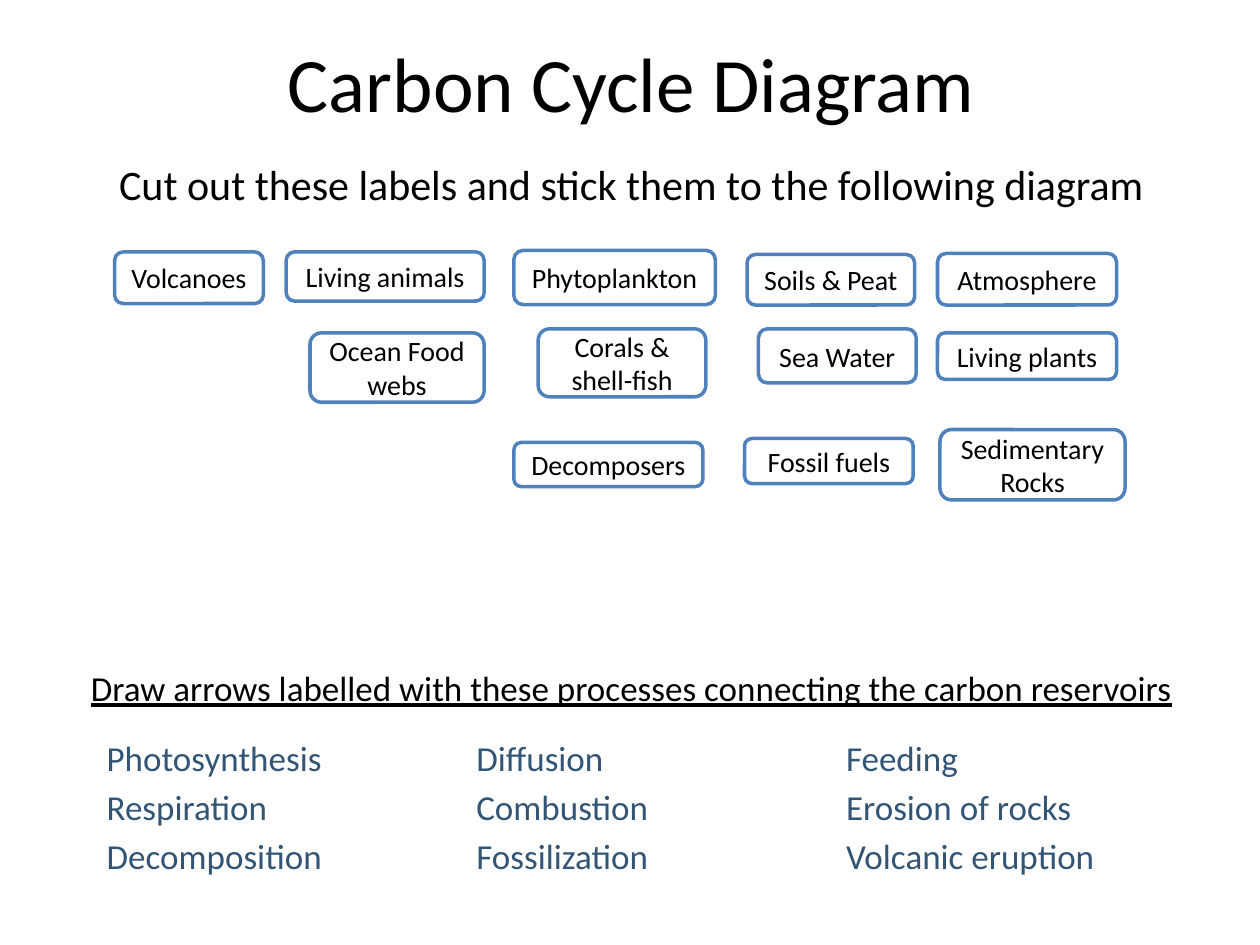
"""Build a worksheet slide of carbon cycle labels and processes."""
from pptx import Presentation
from pptx import util as u
from pptx.dml.color import RGBColor
from pptx.enum import shapes, text

TITLE = "Carbon Cycle Diagram"
CUT_OUT = "Cut out these labels and stick them to the following diagram"
DRAW = "Draw arrows labelled with these processes connecting the carbon reservoirs"
PROCESSES = [
    "Photosynthesis", "Respiration", "Decomposition",
    "Diffusion", "Combustion", "Fossilization",
    "Feeding", "Erosion of rocks", "Volcanic eruption",
]
LABELS = [
    ("Volcanoes", 2.31, 5.08, 3, 1.04),
    ("Living animals", 5.77, 5.08, 3.99, 0.99),
    ("Phytoplankton", 10.36, 5.05, 4.06, 1.09),
    ("Soils & Peat", 15.06, 5.13, 3.38, 1.02),
    ("Atmosphere", 18.9, 5.11, 3.61, 1.04),
    ("Ocean Food webs", 6.25, 6.71, 3.51, 1.4),
    ("Corals & shell-fish", 10.85, 6.63, 3.38, 1.37),
    ("Sea Water", 15.29, 6.63, 3.18, 1.09),
    ("Living plants", 18.9, 6.71, 3.61, 0.94),
    ("Decomposers", 10.36, 8.92, 3.81, 0.89),
    ("Fossil fuels", 15.01, 8.84, 3.4, 0.91),
    ("Sedimentary Rocks", 18.95, 8.66, 3.73, 1.42),
]
LEFT, WIDTH = 1.3, 22.86
BLACK, WHITE, BORDER, PROCESS = "000000", "FFFFFF", "4F81BD", "325576"


def color(value):
    return RGBColor.from_string(value)


def write(shape, lines, size, ink=BLACK, align=text.PP_ALIGN.CENTER,
          anchor=text.MSO_ANCHOR.MIDDLE, before=0, underline=None):
    frame = shape.text_frame
    frame.word_wrap = True
    frame.auto_size = text.MSO_AUTO_SIZE.NONE
    frame.vertical_anchor = anchor
    frame.text = "\n".join(lines)
    for para in frame.paragraphs:
        para.alignment = align
        para.space_before = u.Pt(before)
        para.font.name = "Calibri"
        para.font.size = u.Pt(size)
        para.font.underline = underline
        para.font.color.rgb = color(ink)


def add_text(page, lines, left, top, height, size, **style):
    box = page.shapes.add_textbox(*map(u.Cm, (left, top, WIDTH, height)))
    write(box, lines, size, anchor=text.MSO_ANCHOR.TOP, before=size * 0.2, **style)
    return box


def add_label(page, name, *place):
    label = page.shapes.add_shape(
        shapes.MSO_SHAPE.ROUNDED_RECTANGLE, *map(u.Cm, place))
    label.shadow.inherit = False
    label.fill.solid()
    label.fill.fore_color.rgb = color(WHITE)
    label.line.color.rgb = color(BORDER)
    label.line.width = u.Pt(2)
    write(label, [name], 16)


def main():
    deck = Presentation()
    deck.slide_width, deck.slide_height = u.Cm(25.4), u.Cm(19.05)
    page = deck.slides.add_slide(deck.slide_layouts[5])
    title = page.shapes.title
    title.left, title.top, title.width, title.height = map(
        u.Cm, (LEFT, 0.74, WIDTH, 1.8))
    write(title, [TITLE], 44)
    add_text(page, [CUT_OUT], LEFT, 3.07, 1.45, 24)
    processes = add_text(page, PROCESSES, 1.9, 14.73, 3.81, 20,
                         ink=PROCESS, align=text.PP_ALIGN.LEFT)
    processes.element.txBody.bodyPr.set("numCol", "3")
    add_text(page, [DRAW], LEFT, 13.31, 1.45, 20, underline=True)
    for label in LABELS:
        add_label(page, *label)
    deck.save("out.pptx")


if __name__ == "__main__":
    main()
